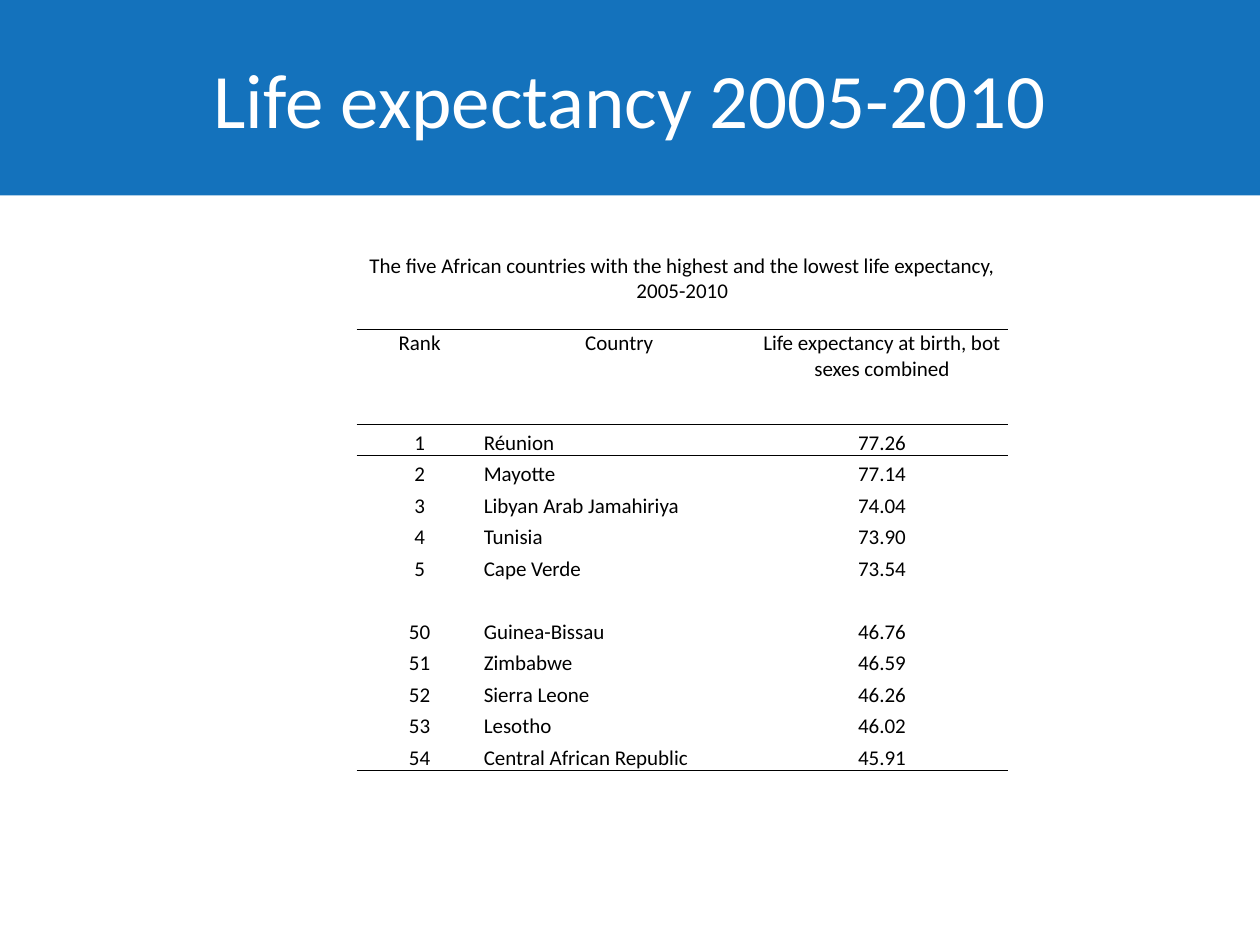
from lxml import etree
from pptx import Presentation
from pptx import util as u
from pptx.dml.color import RGBColor
from pptx.enum import text
from pptx.oxml import ns

BLUE = RGBColor(0x14, 0x72, 0xBC)
WHITE = RGBColor(0xFF, 0xFF, 0xFF)
BLACK = RGBColor(0, 0, 0)
NO_STYLE = "{2D5ABB26-0587-4C30-8999-92F81FD0307C}"
CENTER, LEFT = text.PP_ALIGN.CENTER, text.PP_ALIGN.LEFT
TOP, MIDDLE, BOTTOM = text.MSO_ANCHOR.TOP, text.MSO_ANCHOR.MIDDLE, text.MSO_ANCHOR.BOTTOM


def write(frame, words, size=12, color=BLACK, align=CENTER):
    para = frame.paragraphs[0]
    para.alignment = align
    para.font.size = u.Pt(size)
    if words:
        span = para.add_run()
        span.text = words
        span.font.name = "Calibri"
        span.font.size = u.Pt(size)
        span.font.color.rgb = color
    else:
        # An empty cell keeps its row low only if its end mark is small too
        etree.SubElement(para._p, ns.qn("a:endParaRPr"), sz=str(size * 100))


def add_border(cell, side):
    properties = cell._tc.get_or_add_tcPr()
    line = etree.Element(ns.qn("a:ln" + side), w=str(u.Pt(0.5)))
    fill = etree.SubElement(line, ns.qn("a:solidFill"))
    etree.SubElement(fill, ns.qn("a:srgbClr"), val=str(BLACK))
    position = len(properties.findall(ns.qn("a:lnT")))
    properties.insert(position, line)


deck = Presentation()
deck.slide_width, deck.slide_height = u.Inches(10), u.Inches(7.5)
page = deck.slides.add_slide(deck.slide_layouts[5])

# Title band
title = page.shapes.title
title.left, title.top = u.Inches(0), u.Inches(0)
title.width, title.height = u.Inches(10), u.Inches(1.55)
title.fill.solid()
title.fill.fore_color.rgb = BLUE
title.text_frame.vertical_anchor = MIDDLE
write(title.text_frame, "Life expectancy 2005-2010", size=44, color=WHITE)

# Table contents: caption, headings, highest five, gap, lowest five
rows = [
    ("The five African countries with the highest and the lowest life expectancy, 2005-2010", "", ""),
    ("Rank", "Country", "Life expectancy at birth, bot sexes combined"),
    ("1", "Réunion", "77.26"),
    ("2", "Mayotte", "77.14"),
    ("3", "Libyan Arab Jamahiriya", "74.04"),
    ("4", "Tunisia", "73.90"),
    ("5", "Cape Verde", "73.54"),
    ("", "", ""),
    ("50", "Guinea-Bissau", "46.76"),
    ("51", "Zimbabwe", "46.59"),
    ("52", "Sierra Leone", "46.26"),
    ("53", "Lesotho", "46.02"),
    ("54", "Central African Republic", "45.91"),
]
CAPTION, HEADING, LAST = 0, 1, len(rows) - 1
widths = [1, 2.17, 2]
heights = [0.6, 0.75] + [0.25] * (len(rows) - 2)

# Table grid
frame = page.shapes.add_table(
    len(rows), len(widths), u.Inches(2.83), u.Inches(2),
    u.Inches(sum(widths)), u.Inches(sum(heights)))
table = frame.table
table.first_row = table.horz_banding = False
table._tbl.tblPr.find(ns.qn("a:tableStyleId")).text = NO_STYLE
for column, width in zip(table.columns, widths):
    column.width = u.Inches(width)
for row, height in zip(table.rows, heights):
    row.height = u.Inches(height)
table.cell(CAPTION, 0).merge(table.cell(CAPTION, 2))

# Cells, with rules around the heading and under the last row
for r, values in enumerate(rows):
    for c, value in enumerate(values):
        cell = table.cell(r, c)
        cell.margin_left = cell.margin_right = cell.margin_top = u.Inches(0.01)
        cell.margin_bottom = u.Inches(0.2 if r == CAPTION else 0)
        cell.vertical_anchor = TOP if r == HEADING else BOTTOM
        cell.fill.background()
        write(cell.text_frame, value, align=LEFT if c == 1 and r > HEADING else CENTER)
        if r in (HEADING, HEADING + 1):
            add_border(cell, "T")
        if r in (CAPTION, HEADING, LAST):
            add_border(cell, "B")

deck.save("out.pptx")
